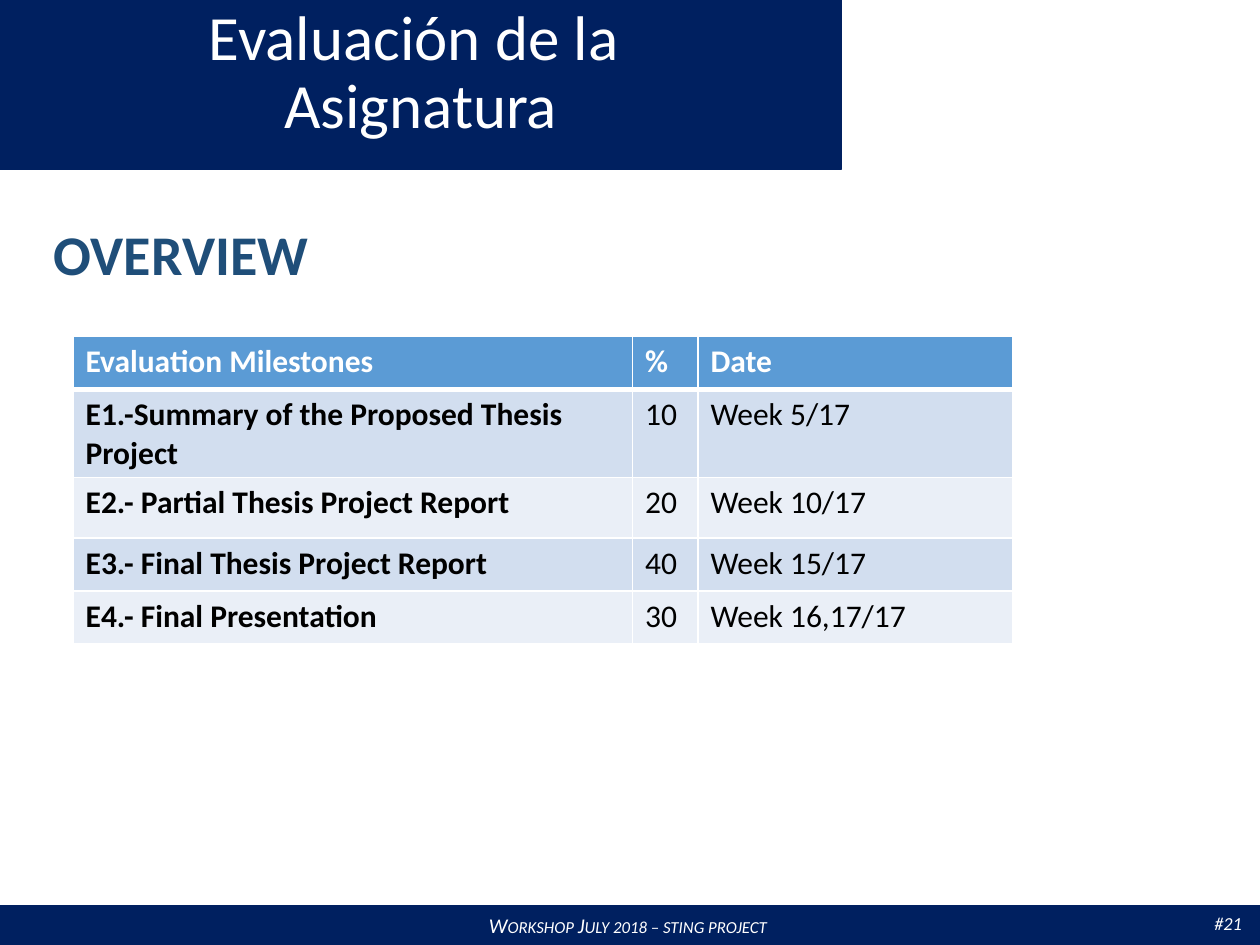
from dataclasses import dataclass

from lxml.etree import SubElement
from pptx import Presentation
from pptx.dml.color import RGBColor
from pptx.enum.shapes import MSO_SHAPE
from pptx.enum.text import MSO_ANCHOR, PP_ALIGN
from pptx.oxml.ns import qn
from pptx.util import Inches, Pt


@dataclass(frozen=True)
class Theme:
    font: str = "Calibri"
    navy: str = "002060"
    heading: str = "1F4E79"
    header: str = "5B9BD5"
    bands: tuple = ("D2DEEF", "EAEFF7")
    white: str = "FFFFFF"
    black: str = "000000"
    title_size: float = 36
    heading_size: float = 32
    table_size: float = 18
    footer_size: float = 12
    number_size: float = 10.5


theme = Theme()


def write(frame, text, size, color, bold=False, italic=False, align=PP_ALIGN.LEFT,
          anchor=MSO_ANCHOR.TOP, wrap=True, spacing=None, small_caps=False):
    frame.word_wrap = wrap
    frame.vertical_anchor = anchor
    frame.text = text
    paragraph = frame.paragraphs[0]
    paragraph.alignment = align
    if spacing:
        paragraph.line_spacing = spacing
    for run in paragraph.runs:
        run.font.name = theme.font
        run.font.size = Pt(size)
        run.font.bold = bold
        run.font.italic = italic
        run.font.color.rgb = RGBColor.from_string(color)
        if small_caps:
            run._r.get_or_add_rPr().set("cap", "small")


def add_border(cell, side, width):
    line = SubElement(cell._tc.get_or_add_tcPr(), qn(f"a:ln{side}"), w=str(Pt(width)))
    SubElement(SubElement(line, qn("a:solidFill")), qn("a:srgbClr"), val=theme.white)


prs = Presentation()
prs.slide_width = Inches(10)
prs.slide_height = Inches(7.5)
slide = prs.slides.add_slide(prs.slide_layouts[5])
shapes = slide.shapes

title = shapes.title
banner = shapes.add_shape(MSO_SHAPE.RECTANGLE, 0, 0, Inches(6.68), Inches(1.34))
footer = shapes.add_shape(MSO_SHAPE.RECTANGLE, 0, Inches(7.19), Inches(10), Inches(0.31))
for bar in (banner, footer):
    bar.shadow.inherit = False
    bar.fill.solid()
    bar.fill.fore_color.rgb = RGBColor.from_string(theme.navy)
    bar.line.color.rgb = RGBColor.from_string(theme.navy)
    bar.line.width = Pt(1)
title._element.addprevious(banner._element)

write(footer.text_frame, "Workshop July 2018 – sting project ", theme.footer_size, theme.white,
      italic=True, align=PP_ALIGN.CENTER, anchor=MSO_ANCHOR.MIDDLE, small_caps=True)

page_number = shapes.add_textbox(Inches(9.54), Inches(7.19), Inches(0.53), Inches(0.28))
write(page_number.text_frame, "#21", theme.number_size, theme.white, italic=True, wrap=False)

title.left, title.top = 0, Inches(-0.14)
title.width, title.height = Inches(6.68), Inches(1.45)
write(title.text_frame, "Evaluación de la \vAsignatura", theme.title_size, theme.white,
      align=PP_ALIGN.CENTER, anchor=MSO_ANCHOR.MIDDLE, spacing=0.9)

overview = shapes.add_textbox(Inches(0.33), Inches(1.69), Inches(3.66), Inches(0.64))
write(overview.text_frame, "OVERVIEW", theme.heading_size, theme.heading, bold=True)

milestones = [
    ("Evaluation Milestones", "%", "Date"),
    ("E1.-Summary of the Proposed Thesis Project", "10", "Week 5/17"),
    ("E2.- Partial Thesis Project Report", "20", "Week 10/17"),
    ("E3.- Final Thesis Project Report", "40", "Week 15/17"),
    ("E4.- Final Presentation", "30", "Week 16,17/17"),
]
column_widths = (4.44, 0.52, 2.5)
row_heights = (0.42, 0.7, 0.48, 0.42, 0.42)
evaluation = shapes.add_table(len(milestones), len(column_widths), Inches(0.58), Inches(2.67),
                              Inches(sum(column_widths)), Inches(sum(row_heights))).table
for column, width in zip(evaluation.columns, column_widths):
    column.width = Inches(width)
for row, height in zip(evaluation.rows, row_heights):
    row.height = Inches(height)

for r, milestone in enumerate(milestones):
    is_header = r == 0
    fill = theme.header if is_header else theme.bands[(r - 1) % 2]
    for c, text in enumerate(milestone):
        cell = evaluation.cell(r, c)
        write(cell.text_frame, text, theme.table_size,
              theme.white if is_header else theme.black, bold=is_header or c == 0)
        for side in "LRTB":
            thick = (is_header and side == "B") or (r == 1 and side == "T")
            add_border(cell, side, 3 if thick else 1)
        cell.fill.solid()
        cell.fill.fore_color.rgb = RGBColor.from_string(fill)

prs.save("out.pptx")
